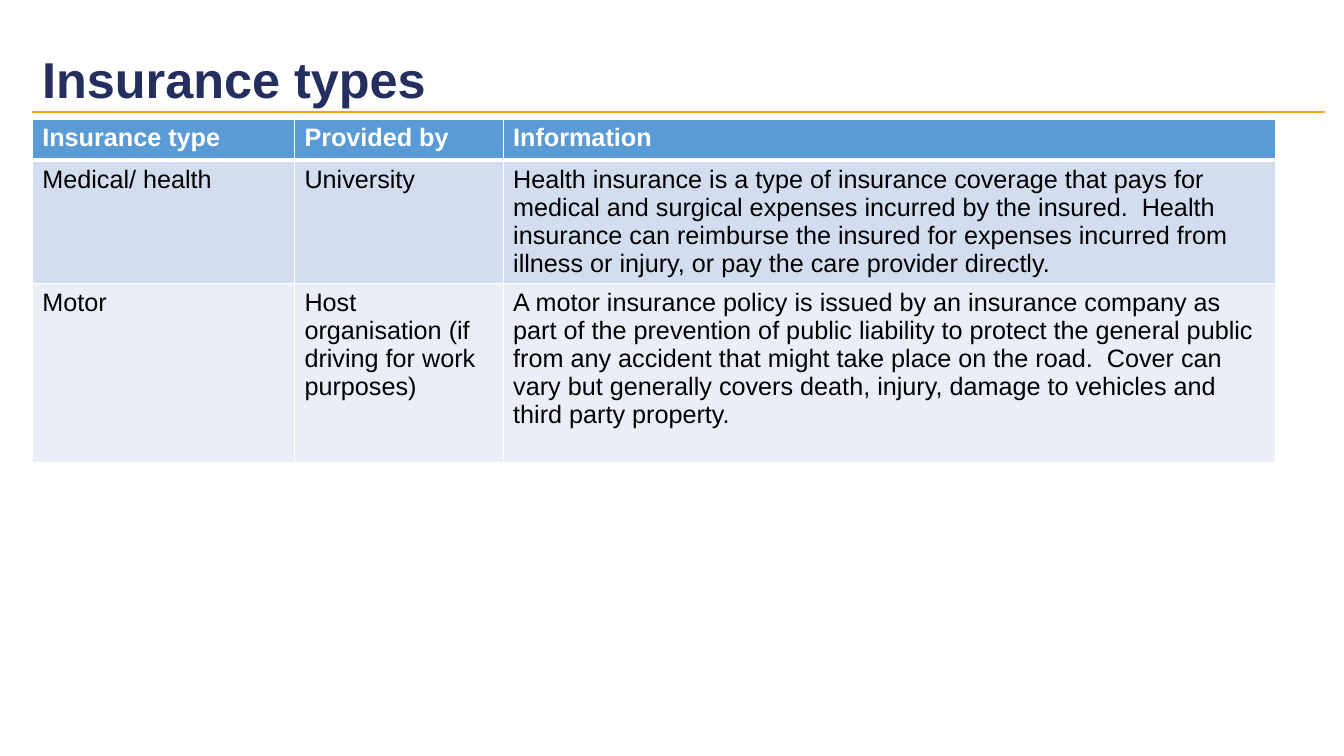
"""Build the slide on insurance types: title, rule and table."""
from lxml import etree
from pptx import Presentation, dml, util as u
from pptx.dml.color import RGBColor
from pptx.enum import shapes, text
from pptx.oxml.ns import qn


def style(font, size, color, bold):
    font.name, font.size, font.bold = "Arial", u.Pt(size), bold
    font.color.rgb = RGBColor.from_string(color)


def add_border(cell, side, points):
    border = etree.SubElement(cell._tc.get_or_add_tcPr(), qn(f"a:{side}"), w=str(u.Pt(points)))
    fill = etree.SubElement(border, qn("a:solidFill"))
    etree.SubElement(fill, qn("a:srgbClr"), val="FFFFFF")


deck = Presentation()
deck.slide_width, deck.slide_height = u.Inches(13.33), u.Inches(7.5)
slide = deck.slides.add_slide(deck.slide_layouts[6])
left = u.Inches(0.32)

rule = slide.shapes.add_connector(
    shapes.MSO_CONNECTOR.STRAIGHT, left, u.Inches(1.11), u.Inches(13.14), u.Inches(1.11))
rule.line.color.rgb = RGBColor.from_string("F99F1B")
rule.line.width = u.Pt(1.5)
etree.SubElement(rule._element.spPr, qn("a:effectLst"))

rows = [
    ("Insurance type", "Provided by", "Information"),
    ("Medical/ health", "University",
     "Health insurance is a type of insurance coverage that pays for medical and surgical "
     "expenses incurred by the insured.  Health insurance can reimburse the insured for "
     "expenses incurred from illness or injury, or pay the care provider directly."),
    ("Motor", "Host organisation (if driving for work purposes)",
     "A motor insurance policy is issued by an insurance company as part of the prevention "
     "of public liability to protect the general public from any accident that might take "
     "place on the road.  Cover can vary but generally covers death, injury, damage to "
     "vehicles and third party property."),
]
column_widths = [2.6, 2.07, 7.66]
row_heights = [0.41, 1.21, 1.78]
row_fills = ["5B9BD5", "D2DEEF", "EAEFF7"]

insurance = slide.shapes.add_table(
    len(rows), len(column_widths), left, u.Inches(1.18),
    u.Inches(sum(column_widths)), u.Inches(sum(row_heights))).table
for column, width in zip(insurance.columns, column_widths):
    column.width = u.Inches(width)
for r, (entries, height, fill) in enumerate(zip(rows, row_heights, row_fills)):
    insurance.rows[r].height = u.Inches(height)
    is_header = r == 0
    for c, entry in enumerate(entries):
        cell = insurance.cell(r, c)
        cell.text_frame.text = entry
        style(cell.text_frame.paragraphs[0].runs[0].font, 18,
              "FFFFFF" if is_header else "000000", is_header)
        for side in ("lnL", "lnR", "lnT", "lnB"):
            thick = (is_header and side == "lnB") or (r == 1 and side == "lnT")
            add_border(cell, side, 3 if thick else 1)
        cell.fill.solid()
        cell.fill.fore_color.rgb = RGBColor.from_string(fill)

title = slide.shapes.add_textbox(left, u.Inches(0.47), u.Inches(12.77), u.Inches(0.7)).text_frame
title.word_wrap = True
title.vertical_anchor = text.MSO_ANCHOR.MIDDLE
title.text = "Insurance types"
title.paragraphs[0].line_spacing = 0.9
style(title.paragraphs[0].runs[0].font, 36, "242F60", True)

deck.save("out.pptx")
